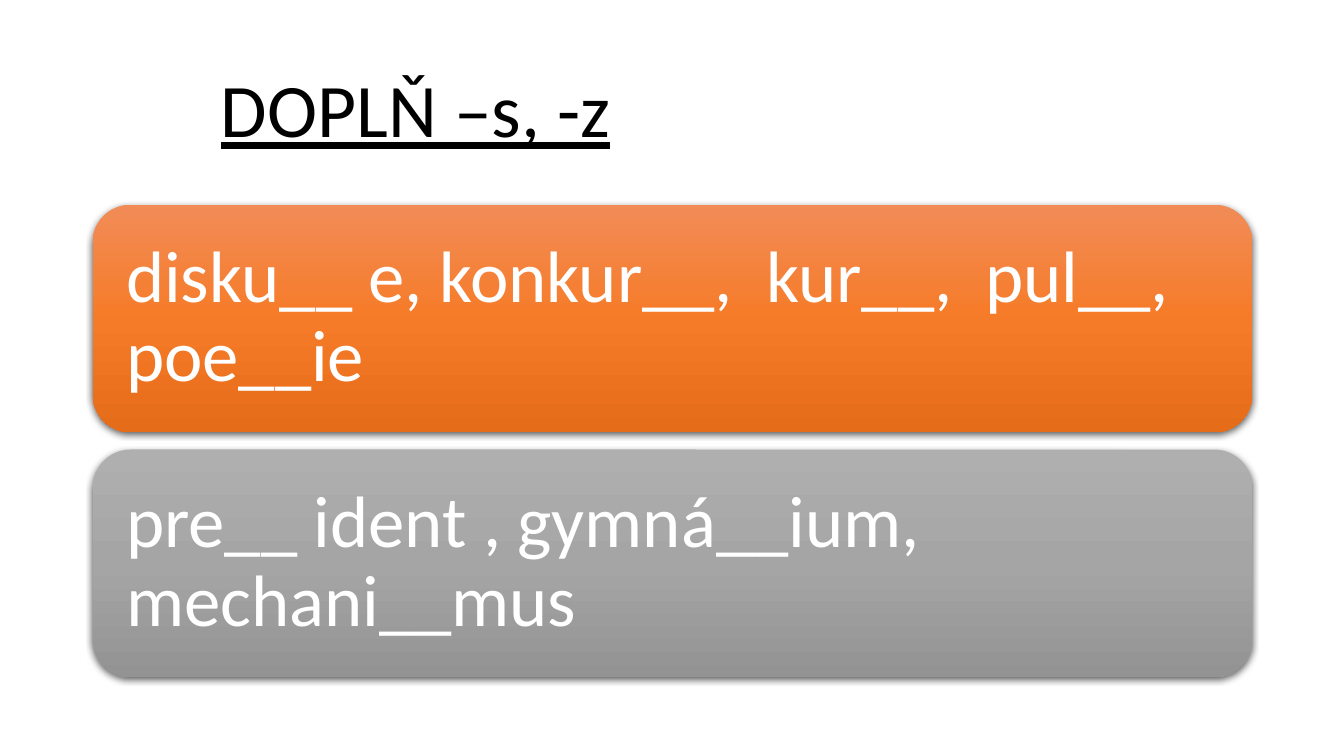
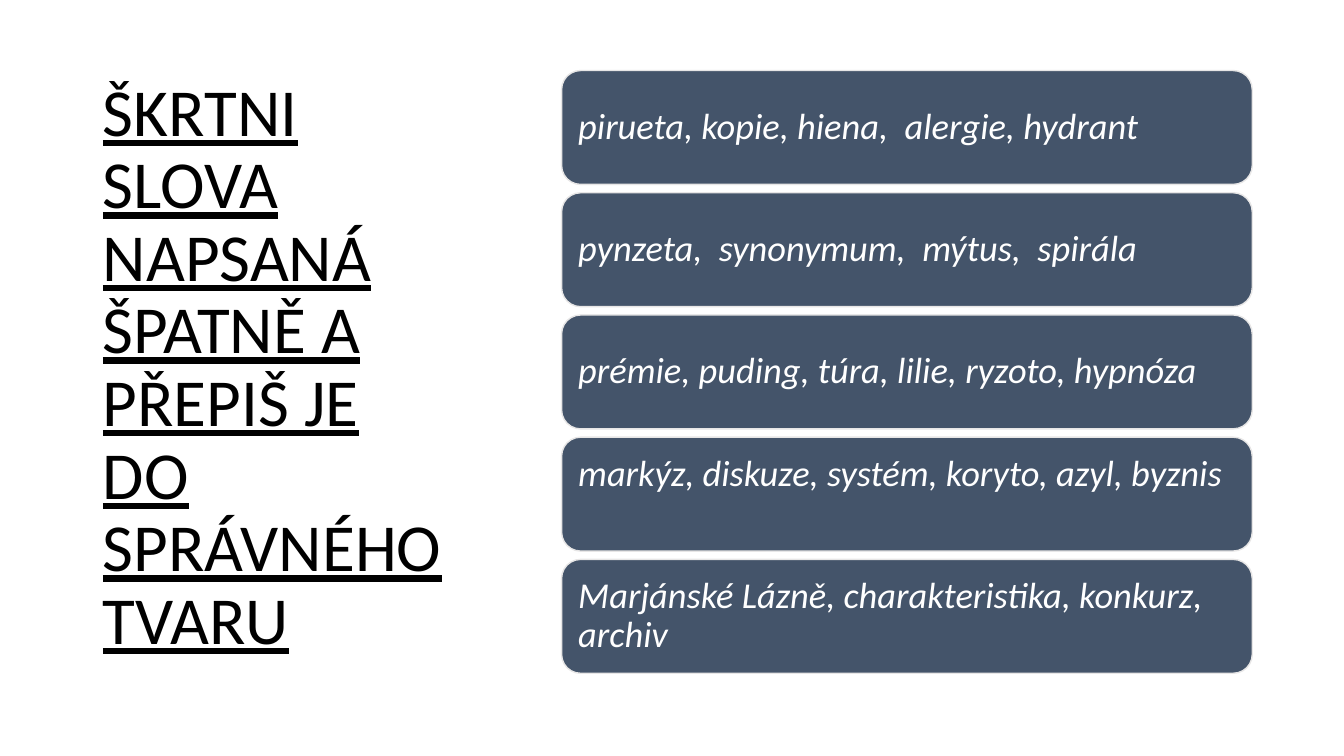
from copy import deepcopy

from lxml import etree
from pptx import Presentation
from pptx.dml.color import RGBColor
from pptx.enum.shapes import MSO_SHAPE
from pptx.enum.text import MSO_ANCHOR, MSO_AUTO_SIZE, PP_ALIGN
from pptx.oxml.ns import qn
from pptx.util import Inches, Pt

ROUNDED = MSO_SHAPE.ROUNDED_RECTANGLE
MIDDLE = MSO_ANCHOR.MIDDLE
LEFT = PP_ALIGN.LEFT
NO_AUTOFIT = MSO_AUTO_SIZE.NONE

FONT = "Calibri"
BLACK, WHITE = "000000", "FFFFFF"
SLATE, PALE_GREY = "44546A", "E7E6E6"
TITLE_ONLY = 5


def color(hex_code):
    return RGBColor.from_string(hex_code)


def write(shape, text, size, hex_code, inset=None, underline=None, italic=None):
    frame = shape.text_frame
    frame.word_wrap = True
    frame.auto_size = NO_AUTOFIT
    frame.vertical_anchor = MIDDLE
    if inset is not None:
        frame.margin_left = frame.margin_right = Inches(inset)
        frame.margin_top = frame.margin_bottom = Inches(inset)
    paragraph = frame.paragraphs[0]
    paragraph.alignment = LEFT
    paragraph.line_spacing = 0.9
    run = paragraph.add_run()
    run.text = text
    run.font.name = FONT
    run.font.size = Pt(size)
    run.font.color.rgb = color(hex_code)
    run.font.underline = underline
    run.font.italic = italic


prs = Presentation()
prs.slide_width, prs.slide_height = Inches(13.33), Inches(7.5)

titles = [
    ("DOPLŇ –s, -z", 54, (2.09, 0.4, 10.32, 1.45)),
    ("ŠKRTNI SLOVA NAPSANÁ ŠPATNĚ A PŘEPIŠ JE DO SPRÁVNÉHO TVARU", 48,
     (0.92, 0.61, 3.69, 6.09)),
]
for text, size, box in titles:
    slide = prs.slides.add_slide(prs.slide_layouts[TITLE_ONLY])
    title = slide.shapes.title
    title.left, title.top, title.width, title.height = map(Inches, box)
    write(title, text, size, BLACK, underline=True)

fill_in_slide, cross_out_slide = prs.slides

exercises = [
    ("disku__ e, konkur__,  kur__,  pul__,  poe__ie", ("F18C57", "F67B28", "E56C19")),
    ("pre__ ident , gymná__ium,  mechani__mus", ("AFAFAF", "A5A5A5", "939393")),
]
for row, (text, shades) in enumerate(exercises):
    bar = fill_in_slide.shapes.add_shape(
        ROUNDED, Inches(0.92), Inches(2.03 + row * 2.43), Inches(11.5), Inches(2.26))
    bar.line.fill.background()
    bar.fill.gradient()
    bar.fill.gradient_angle = 270
    stop_list = bar.element.spPr.find(qn("a:gradFill")).find(qn("a:gsLst"))
    stop_list.append(deepcopy(stop_list[0]))
    for stop, position, shade in zip(bar.fill.gradient_stops, (0, 0.5, 1), shades):
        stop.position = position
        stop.color.rgb = color(shade)
    bar.shadow.inherit = False
    effects = bar.element.spPr.find(qn("a:effectLst"))
    shadow = etree.SubElement(effects, qn("a:outerShdw"), blurRad=str(Pt(4.5)),
                              dist=str(Pt(1.5)), dir="5400000", rotWithShape="0")
    shadow_color = etree.SubElement(shadow, qn("a:srgbClr"), val=BLACK)
    etree.SubElement(shadow_color, qn("a:alpha"), val="63000")
    write(bar, text, 52, WHITE, inset=0.22)

word_rows = [
    ("pirueta, kopie, hiena,  alergie, hydrant", 0.11),
    ("pynzeta,  synonymum,  mýtus,  spirála", 0.11),
    ("prémie, puding, túra, lilie, ryzoto, hypnóza", 0.11),
    ("markýz, diskuze, systém, koryto, azyl, byznis", 0.5),
    ("Marjánské Lázně, charakteristika, konkurz, archiv", 0.11),
]
first_top, last_top = 0.7, 5.55
row_step = (last_top - first_top) / (len(word_rows) - 1)
for row, (text, bottom_inset) in enumerate(word_rows):
    bar = cross_out_slide.shapes.add_shape(
        ROUNDED, Inches(5.57), Inches(first_top + row * row_step), Inches(6.85), Inches(1.13))
    bar.shadow.inherit = False
    bar.fill.solid()
    bar.fill.fore_color.rgb = color(SLATE)
    bar.line.color.rgb = color(PALE_GREY)
    bar.line.width = Pt(1)
    write(bar, text, 26, WHITE, inset=0.11, italic=True)
    bar.text_frame.margin_bottom = Inches(bottom_inset)

prs.save("out.pptx")
